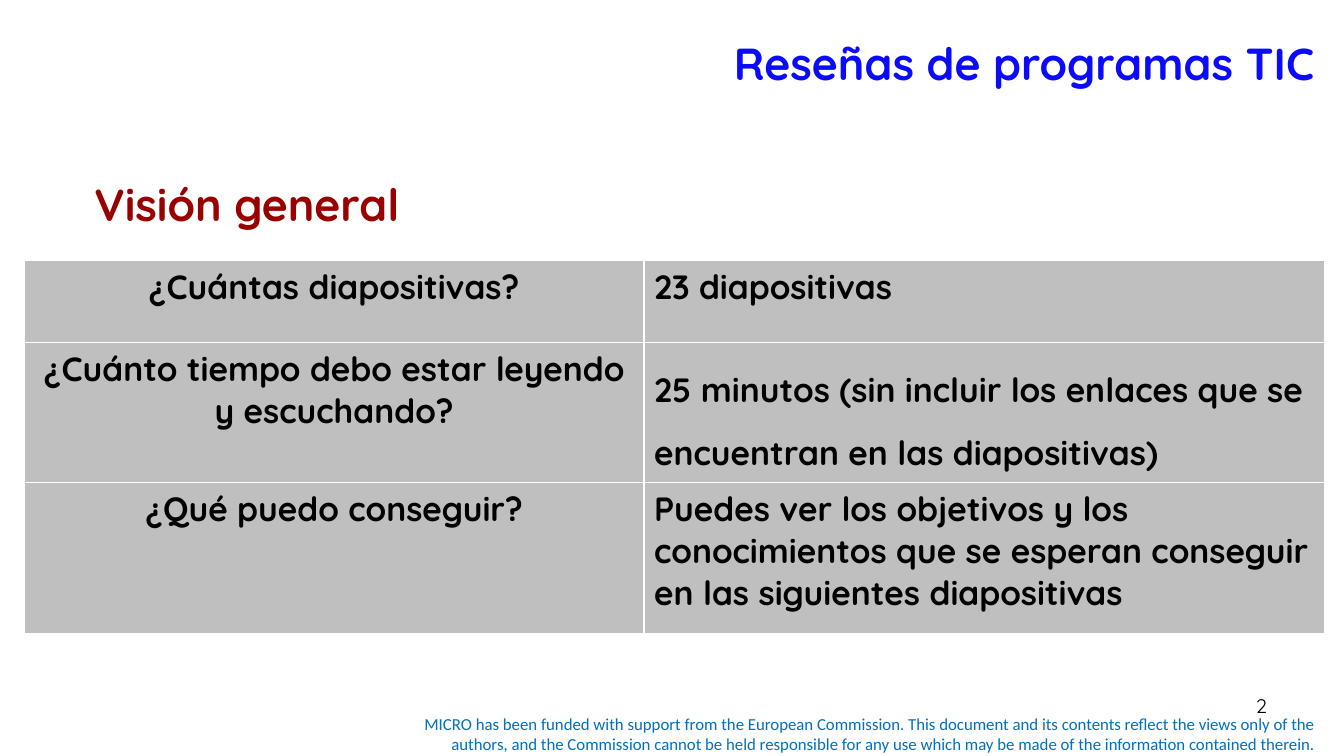
from lxml.etree import SubElement
from pptx import Presentation
from pptx.dml.color import RGBColor
from pptx.enum.text import MSO_ANCHOR as Anchor, PP_ALIGN as Align
from pptx.oxml.ns import qn
from pptx.util import Cm, Pt

COLORS = {
    "title": "0B0AFD",
    "heading": "990000",
    "footer": "0070C0",
    "text": "000000",
    "cell": "BFBFBF",
    "border": "FFFFFF",
}


def write(frame, text, color, align, **font_format):
    """Put one formatted paragraph into a text frame."""
    paragraph = frame.paragraphs[0]
    paragraph.text = text
    paragraph.alignment = align
    font = paragraph.runs[0].font
    font.color.rgb = RGBColor.from_string(COLORS[color])
    for name, value in font_format.items():
        setattr(font, name, value)
    return paragraph


def add_borders(cell):
    """Draw a thin line on all four sides of a cell."""
    properties = cell._tc.get_or_add_tcPr()
    for index, side in enumerate(("lnL", "lnR", "lnT", "lnB")):
        line = SubElement(properties, qn(f"a:{side}"), w=str(Pt(1)))
        fill = SubElement(line, qn("a:solidFill"))
        SubElement(fill, qn("a:srgbClr"), val=COLORS["border"])
        properties.insert(index, line)  # lines come before the cell fill


presentation = Presentation()
presentation.slide_width = Cm(33.87)
presentation.slide_height = Cm(19.05)
slide = presentation.slides.add_slide(presentation.slide_layouts[6])

# Title, heading, page number and funding notice
TITLE_FONT = {"name": "Quicksand", "size": Pt(32), "bold": True}
NUMBER_FONT = {"name": "Quicksand", "size": Pt(14)}
FOOTER_FONT = {"name": "Calibri", "size": Pt(12)}
funding_notice = (
    "MICRO has been funded with support from the European Commission. "
    "This document and its contents reflect the views only of the authors, "
    "and the Commission cannot be held responsible for any use which may be "
    "made of the information contained therein."
)
labels = [
    (funding_notice, (9.53, 17.86, 23.88, 1.27), "footer", Align.RIGHT,
     Anchor.MIDDLE, FOOTER_FONT),
    ("2", (24.28, 17.35, 7.9, 1.32), "text", Align.RIGHT,
     Anchor.TOP, NUMBER_FONT),
    ("Visión general", (2.13, 4.34, 9.96, 1.63), "heading", Align.LEFT,
     Anchor.TOP, TITLE_FONT),
    ("Reseñas de programas TIC", (2.9, 0, 30.48, 3.18), "title", Align.RIGHT,
     Anchor.MIDDLE, TITLE_FONT),
]
for text, place, color, align, anchor, font_format in labels:
    frame = slide.shapes.add_textbox(*map(Cm, place)).text_frame
    frame.word_wrap = True
    frame.vertical_anchor = anchor
    write(frame, text, color, align, **font_format)

# Overview table: questions on the left, answers on the right
overview = [
    ("¿Cuántas diapositivas?", "23 diapositivas"),
    ("¿Cuánto tiempo debo estar leyendo y escuchando?",
     "25 minutos (sin incluir los enlaces que se encuentran en las "
     "diapositivas)"),
    ("¿Qué puedo conseguir?",
     "Puedes ver los objetivos y los conocimientos que se esperan conseguir "
     "en las siguientes diapositivas"),
]
column_widths = (15.62, 17.15)
row_heights = (2.06, 3.53, 3.81)
table = slide.shapes.add_table(
    len(overview), len(column_widths), Cm(0.61), Cm(6.57),
    Cm(sum(column_widths)), Cm(sum(row_heights))).table
for column, width in zip(table.columns, column_widths):
    column.width = Cm(width)
for row, height, entries in zip(table.rows, row_heights, overview):
    row.height = Cm(height)
    for cell, text, align in zip(row.cells, entries, (Align.CENTER, Align.LEFT)):
        cell.fill.solid()
        cell.fill.fore_color.rgb = RGBColor.from_string(COLORS["cell"])
        add_borders(cell)
        write(cell.text_frame, text, "text", align,
              name="Quicksand", size=Pt(24), bold=True)

# The reading time is set with wider lines
table.cell(1, 1).text_frame.paragraphs[0].line_spacing = 1.5

presentation.save("out.pptx")
